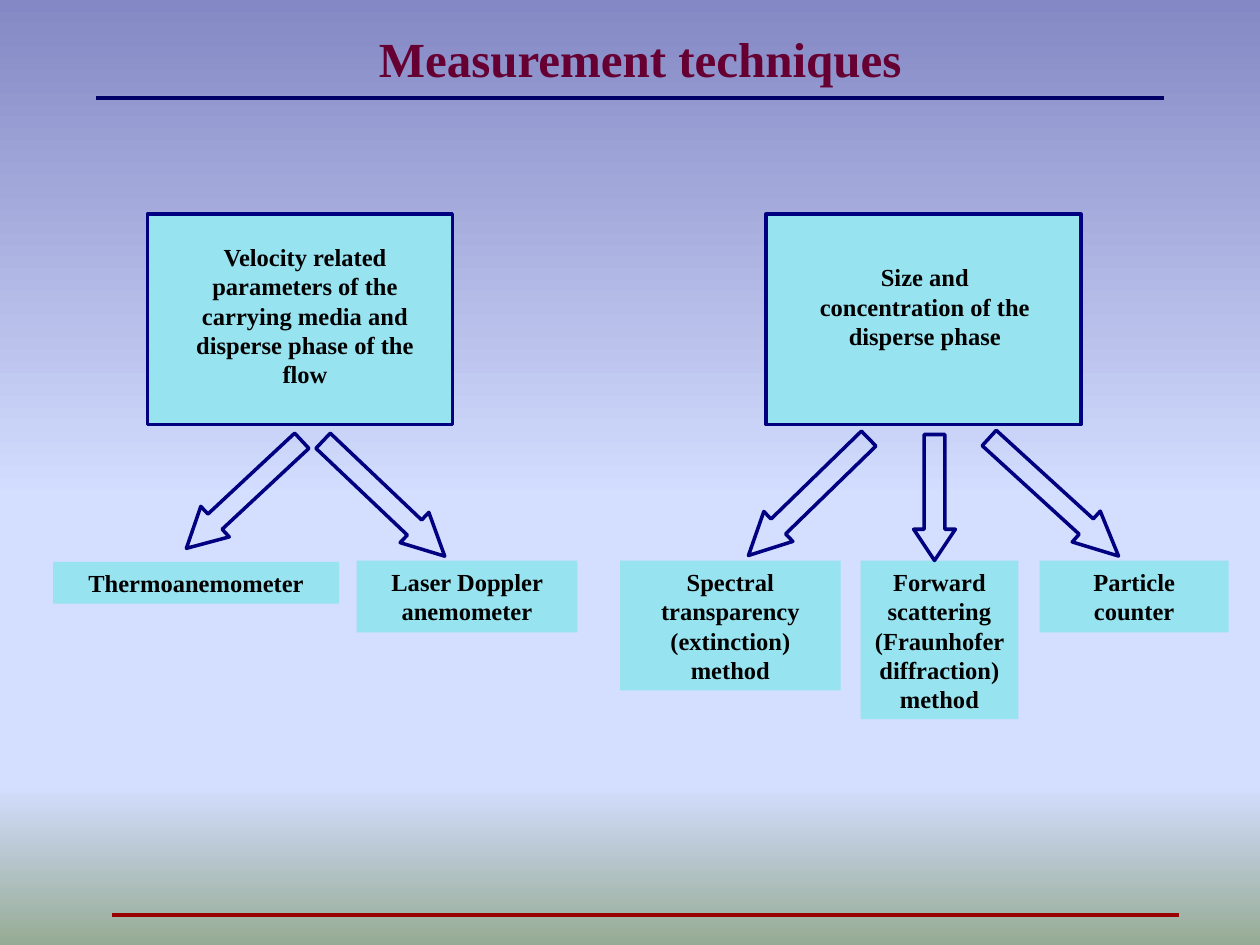
import pptx
import pptx.util
import pptx.dml.color
import pptx.enum.shapes
import pptx.enum.text
import pptx.oxml
import pptx.oxml.ns
import lxml.etree

Cm, Pt = pptx.util.Cm, pptx.util.Pt
RGB = pptx.dml.color.RGBColor.from_string
SHAPE = pptx.enum.shapes.MSO_SHAPE
ANCHOR = pptx.enum.text.MSO_ANCHOR
qn = pptx.oxml.ns.qn

COLORS = {"title": "660033", "text": "000000", "box": "98E3F0", "outline": "000080",
          "top_rule": "000066", "bottom_rule": "990000"}
GRADIENT = [(0, "8488C4"), (53, "D4DEFF"), (83, "D4DEFF"), (100, "96AB94")]


def add_box(shapes, kind, at, fill=None, outline=None):
    sp = shapes.add_shape(kind, *[Cm(v) for v in at])
    sp.shadow.inherit = False
    if fill:
        sp.fill.solid()
        sp.fill.fore_color.rgb = RGB(COLORS[fill])
    else:
        sp.fill.background()
    if outline:
        sp.line.color.rgb = RGB(COLORS[outline])
        sp.line.width = Pt(2)
    else:
        sp.line.fill.background()
    return sp


def set_text(sp, text, size=14, color="text", anchor=ANCHOR.TOP):
    tf = sp.text_frame
    for name, value in {"word_wrap": True, "vertical_anchor": anchor}.items():
        setattr(tf, name, value)
    p = tf.paragraphs[0]
    p.alignment = pptx.enum.text.PP_ALIGN.CENTER
    r = p.add_run()
    r.text = text
    font = {"name": "Times New Roman", "size": Pt(size), "bold": True}
    for name, value in font.items():
        setattr(r.font, name, value)
    r.font.color.rgb = RGB(COLORS[color])
    return p


prs = pptx.Presentation()
prs.slide_width, prs.slide_height = Cm(25.4), Cm(19.05)
s = prs.slides.add_slide(prs.slide_layouts[6])

# Background gradient, top to bottom
fill = s.background.fill
fill.gradient()
fill.gradient_angle = 270
stops = s.element.find(".//" + qn("a:gsLst"))
for old in list(stops):
    stops.remove(old)
for pos, color in GRADIENT:
    gs = lxml.etree.SubElement(stops, qn("a:gs"), pos=str(pos * 1000))
    lxml.etree.SubElement(gs, qn("a:srgbClr"), val=color)

# Rules above and below the content
for x1, x2, y, color in [(1.93, 23.47, 1.98, "top_rule"), (2.26, 23.77, 18.44, "bottom_rule")]:
    line = s.shapes.add_connector(pptx.enum.shapes.MSO_CONNECTOR.STRAIGHT,
                                  Cm(x1), Cm(y), Cm(x2), Cm(y))
    line.line.color.rgb = RGB(COLORS[color])
    line.line.width = Pt(2.25)
    lxml.etree.SubElement(line.element.spPr, qn("a:effectLst"))

# Title
title = s.shapes.add_textbox(Cm(2.11), Cm(0.64), Cm(21.59), Cm(1.19))
p = set_text(title, "Measurement techniques", 28, "title", ANCHOR.MIDDLE)
p.line_spacing = 0.9

# Measured quantities: outlined box grouped with its text
quantities = [
    ((2.97, 4.32, 6.15, 4.24), (3.43, 4.75, 5.44, 3.2),
     "Velocity related parameters of the carrying media and disperse phase of the flow"),
    ((15.44, 4.32, 6.35, 4.24), (16.03, 5.16, 5.23, 2.03),
     "Size and concentration of the disperse phase"),
]
for box_at, text_at, text in quantities:
    group = s.shapes.add_group_shape()
    add_box(group.shapes, SHAPE.RECTANGLE, box_at, "box", "outline")
    set_text(group.shapes.add_textbox(*[Cm(v) for v in text_at]), text)

# Techniques
techniques = [
    ((1.07, 11.33, 5.77, 0.84), "Thermoanemometer"),
    ((7.19, 11.3, 4.45, 1.45), "Laser Doppler anemometer"),
    ((12.5, 11.3, 4.45, 2.62), "Spectral transparency (extinction) method"),
    ((17.35, 11.3, 3.18, 3.2), "Forward scattering (Fraunhofer diffraction) method"),
    ((20.96, 11.3, 3.81, 1.45), "Particle counter"),
]
for at, text in techniques:
    set_text(add_box(s.shapes, SHAPE.RECTANGLE, at, "box"), text)

# Block arrows from quantities to techniques
arrows = [
    (SHAPE.RIGHT_ARROW, (6.05, 9.63, 3.38, 0.84), 43.5, 1),
    (SHAPE.RIGHT_ARROW, (3.33, 9.55, 3.18, 0.84), 137, 0.94),
    (SHAPE.RIGHT_ARROW, (19.48, 9.6, 3.53, 0.84), 42.4, 1.05),
    (SHAPE.RIGHT_ARROW, (14.61, 9.6, 3.38, 0.84), 135.8, 1),
    (SHAPE.DOWN_ARROW, (18.42, 8.76, 0.84, 2.54), 0, 0.75),
]
for kind, at, angle, head in arrows:
    sp = add_box(s.shapes, kind, at, outline="outline")
    sp.rotation = angle
    sp.adjustments[0] = 0.5
    sp.adjustments[1] = head

prs.save("out.pptx")
